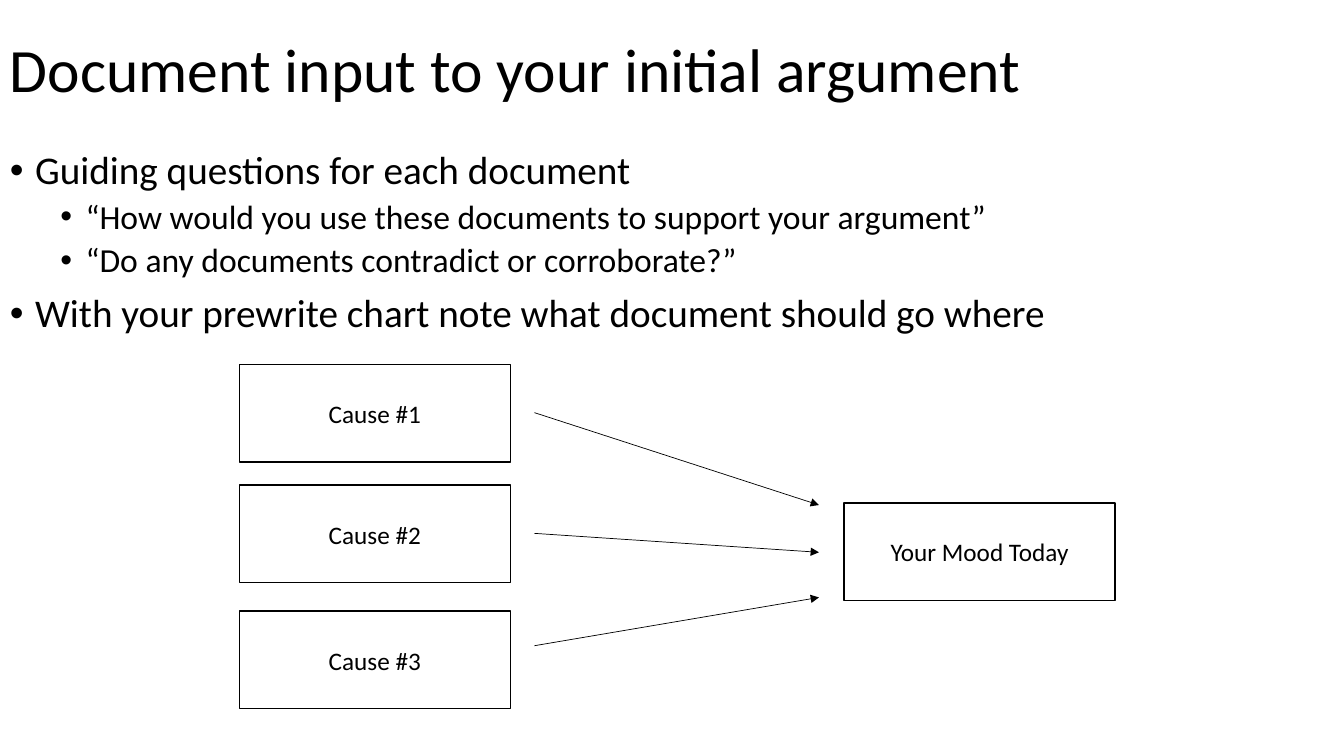
from dataclasses import dataclass

import pptx
import pptx.dml.color
import pptx.enum.shapes
import pptx.enum.text
import pptx.oxml.ns
import pptx.oxml.xmlchemy
import pptx.presentation
import pptx.shapes.autoshape
import pptx.slide
import pptx.util
from lxml import etree

PX = 9525
PAGE_WIDTH, PAGE_HEIGHT = 1280, 720
TITLE_HEIGHT = 139
BOX_WIDTH, BOX_HEIGHT = 258, 93
CAUSE_LEFT, MOOD_LEFT = 228, 804
ARROW_START, ARROW_END = 509, 780
INDENT, LEVEL_STEP = 24, 48
FONT = "Calibri"
BLACK = pptx.dml.color.RGBColor(0x00, 0x00, 0x00)
WHITE = pptx.dml.color.RGBColor(0xFF, 0xFF, 0xFF)


@dataclass(frozen=True)
class Bullet:
    text: str
    level: int = 0


@dataclass(frozen=True)
class Box:
    text: str
    left: int
    top: int


@dataclass(frozen=True)
class Arrow:
    start_y: int
    end_y: int


BULLETS = [
    Bullet("Guiding questions for each document"),
    Bullet("“How would you use these documents to support your argument”", 1),
    Bullet("“Do any documents contradict or corroborate?”", 1),
    Bullet("With your prewrite chart note what document should go where"),
]
BOXES = [
    Box("Cause #1", CAUSE_LEFT, 347),
    Box("Cause #2", CAUSE_LEFT, 462),
    Box("Cause #3", CAUSE_LEFT, 582),
    Box("Your Mood Today", MOOD_LEFT, 479),
]
ARROWS = [Arrow(393, 481), Arrow(508, 526), Arrow(615, 569)]


def px(length: int) -> pptx.util.Emu:
    return pptx.util.Emu(length * PX)


def add_child(parent: etree.ElementBase, tag: str, **attributes: str) -> None:
    child = etree.SubElement(parent, pptx.oxml.ns.qn(tag))
    for name, value in attributes.items():
        child.set(name, value)


def style_text(para, size: int) -> None:
    para.font.name = FONT
    para.font.size = pptx.util.Pt(size)
    para.font.color.rgb = BLACK


def add_text_area(page: pptx.slide.Slide, top: int, height: int):
    area = page.shapes.add_textbox(0, px(top), px(PAGE_WIDTH), px(height))
    area.text_frame.word_wrap = True
    return area.text_frame


def add_title(page: pptx.slide.Slide, text: str) -> None:
    frame = add_text_area(page, 0, TITLE_HEIGHT)
    frame.vertical_anchor = pptx.enum.text.MSO_ANCHOR.MIDDLE
    para = frame.paragraphs[0]
    para.text = text
    para.line_spacing = 0.9
    style_text(para, 44)


def add_bullets(page: pptx.slide.Slide, bullets: list[Bullet]) -> None:
    frame = add_text_area(page, TITLE_HEIGHT, PAGE_HEIGHT - TITLE_HEIGHT)
    for index, bullet in enumerate(bullets):
        para = frame.add_paragraph() if index else frame.paragraphs[0]
        para.text = bullet.text
        para.level = bullet.level
        para.line_spacing = 0.9
        para.space_before = pptx.util.Pt(5 if bullet.level else 10)
        properties = para._p.get_or_add_pPr()
        properties.set("marL", str(px(INDENT + bullet.level * LEVEL_STEP)))
        properties.set("indent", str(-px(INDENT)))
        add_child(properties, "a:buFont", typeface="Arial")
        add_child(properties, "a:buChar", char="•")
        style_text(para, 24 if bullet.level else 28)


def add_box(page: pptx.slide.Slide, box: Box) -> None:
    shape = page.shapes.add_shape(
        pptx.enum.shapes.MSO_SHAPE.RECTANGLE,
        px(box.left), px(box.top), px(BOX_WIDTH), px(BOX_HEIGHT),
    )
    shape.shadow.inherit = False
    shape.fill.solid()
    shape.fill.fore_color.rgb = WHITE
    shape.line.color.rgb = BLACK
    shape.line.width = pptx.util.Pt(1)
    frame = shape.text_frame
    frame.vertical_anchor = pptx.enum.text.MSO_ANCHOR.MIDDLE
    para = frame.paragraphs[0]
    para.text = box.text
    para.alignment = pptx.enum.text.PP_ALIGN.CENTER
    style_text(para, 18)


def add_arrow(page: pptx.slide.Slide, arrow: Arrow) -> None:
    connector = page.shapes.add_connector(
        pptx.enum.shapes.MSO_CONNECTOR.STRAIGHT,
        px(ARROW_START), px(arrow.start_y), px(ARROW_END), px(arrow.end_y),
    )
    connector.line.color.rgb = BLACK
    connector.line.width = pptx.util.Pt(0.5)
    add_child(connector.line._get_or_add_ln(), "a:tailEnd", type="triangle")
    add_child(connector._element.spPr, "a:effectLst")


def main() -> None:
    deck = pptx.Presentation()
    deck.slide_width, deck.slide_height = px(PAGE_WIDTH), px(PAGE_HEIGHT)
    page = deck.slides.add_slide(deck.slide_layouts[6])
    add_title(page, "Document input to your initial argument")
    add_bullets(page, BULLETS)
    for box in BOXES:
        add_box(page, box)
    for arrow in ARROWS:
        add_arrow(page, arrow)
    deck.save("out.pptx")


if __name__ == "__main__":
    main()
